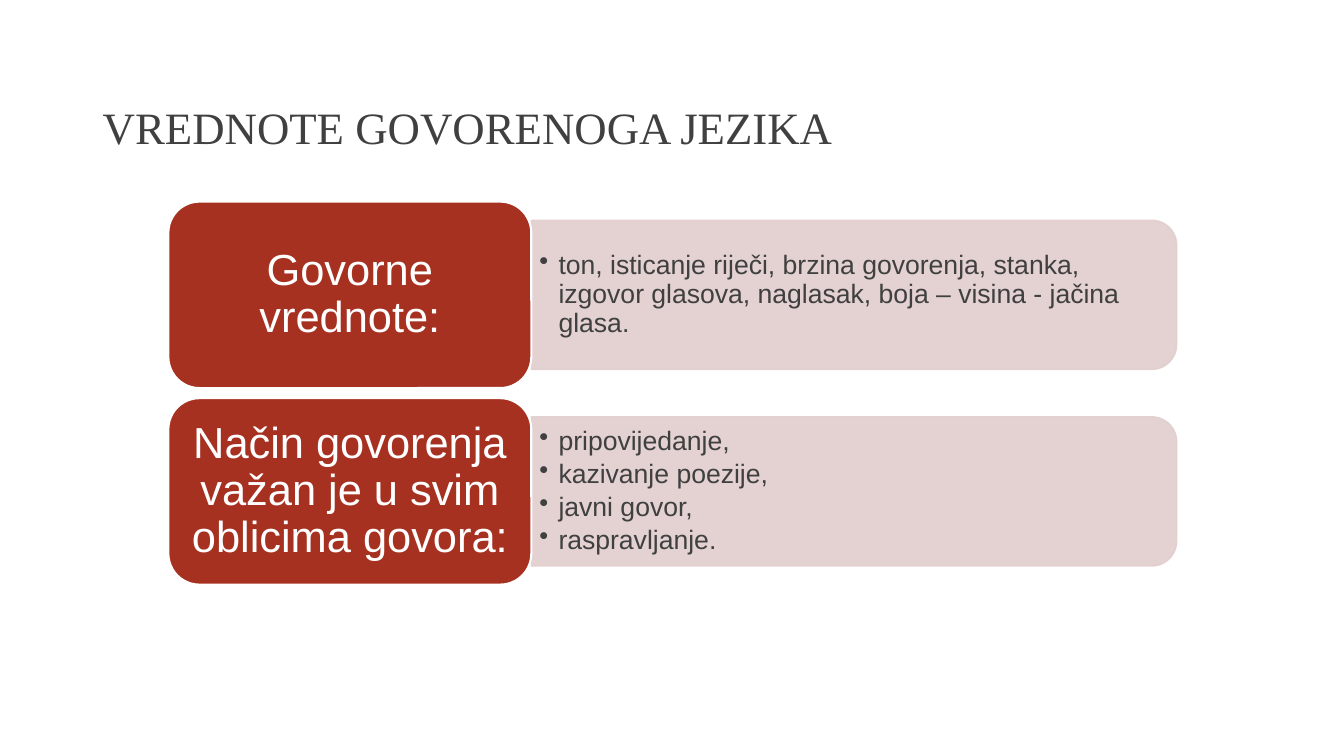
from lxml import etree
from pptx import Presentation
from pptx.dml.color import RGBColor
from pptx.enum.shapes import MSO_SHAPE
from pptx.enum.text import MSO_ANCHOR, PP_ALIGN
from pptx.oxml.ns import qn
from pptx.util import Inches, Pt

ROUND = MSO_SHAPE.ROUNDED_RECTANGLE
ROUND_TOP = MSO_SHAPE.ROUND_2_SAME_RECTANGLE
MIDDLE, BOTTOM = MSO_ANCHOR.MIDDLE, MSO_ANCHOR.BOTTOM
LEFT, CENTER = PP_ALIGN.LEFT, PP_ALIGN.CENTER

RED, PINK, WHITE, GREY = "A63121", "E1CECD", "FFFFFF", "404040"
TOP, PITCH = 2, 1.95
LABEL_X, LABEL_W, LABEL_H = 1.67, 3.6, 1.85
BAR_X, BAR_W, BAR_H = LABEL_X + LABEL_W, 6.4, 1.48

ROWS = [
    ("Govorne vrednote:",
     ["ton, isticanje riječi, brzina govorenja, stanka, izgovor glasova, "
      "naglasak, boja – visina - jačina glasa."]),
    ("Način govorenja važan je u svim oblicima govora:",
     ["pripovijedanje,", "kazivanje poezije,", "javni govor,",
      "raspravljanje."]),
]


def color(code):
    return RGBColor.from_string(code)


def fade(fill, percent):
    """Set the opacity of a solid fill."""
    tone = fill._xPr.find(qn("a:solidFill"))[0]
    etree.SubElement(tone, qn("a:alpha"), val=str(percent * 1000))


def add_bullet(para, indent):
    props = para._p.get_or_add_pPr()
    props.set("marL", str(Inches(indent)))
    props.set("indent", str(-Inches(indent)))
    etree.SubElement(props, qn("a:buChar"), char="•")


def set_text(shape, lines, size, code, font="Arial", align=LEFT,
             anchor=MIDDLE, inset=(0.1, 0.05), after=0, bullet=False):
    frame = shape.text_frame
    frame.word_wrap = True
    frame.vertical_anchor = anchor
    frame.margin_left = frame.margin_right = Inches(inset[0])
    frame.margin_top = frame.margin_bottom = Inches(inset[1])
    frame.text = "\n".join(lines)
    for para in frame.paragraphs:
        para.alignment = align
        para.line_spacing = 0.9
        para.space_after = Pt(after)
        if bullet:
            add_bullet(para, 0.19)
        for run in para.runs:
            run.font.name = font
            run.font.size = Pt(size)
            run.font.color.rgb = color(code)


def add_box(slide, x, y, w, h):
    return slide.shapes.add_textbox(Inches(x), Inches(y), Inches(w), Inches(h))


def add_block(slide, kind, x, y, w, h, fill, line, width):
    block = slide.shapes.add_shape(kind, Inches(x), Inches(y),
                                   Inches(w), Inches(h))
    block.shadow.inherit = False
    block.fill.solid()
    block.fill.fore_color.rgb = color(fill)
    block.line.color.rgb = color(line)
    block.line.width = Pt(width)
    return block


def add_bar(slide, mid, lines):
    """Draw a bar rounded on its right side, with bulleted text over it."""
    bar = add_block(slide, ROUND_TOP, BAR_X + (BAR_W - BAR_H) / 2,
                    mid - BAR_W / 2, BAR_H, BAR_W, PINK, PINK, 1)
    bar.rotation = 90
    fade(bar.fill, 90)
    fade(bar.line.fill, 90)
    box = add_box(slide, BAR_X, mid - 0.67, 6.33, 1.34)
    set_text(box, lines, 19, GREY, inset=(0.08, 0.04), after=3, bullet=True)


def add_label(slide, y, text):
    label = add_block(slide, ROUND, LABEL_X, y, LABEL_W, LABEL_H,
                      RED, WHITE, 1.5)
    set_text(label, [text], 31, WHITE, align=CENTER, inset=(0.13, 0.06))


def main():
    deck = Presentation()
    deck.slide_width, deck.slide_height = Inches(13.33), Inches(7.5)
    slide = deck.slides.add_slide(deck.slide_layouts[6])
    title = add_box(slide, 0.92, 0.4, 10.75, 1.18)
    set_text(title, ["VREDNOTE GOVORENOGA JEZIKA"], 32, GREY,
             font="Times New Roman", anchor=BOTTOM)
    for i, (label, lines) in enumerate(ROWS):
        y = TOP + i * PITCH
        add_bar(slide, y + LABEL_H / 2, lines)
        add_label(slide, y, label)
    deck.save("out.pptx")


if __name__ == "__main__":
    main()
